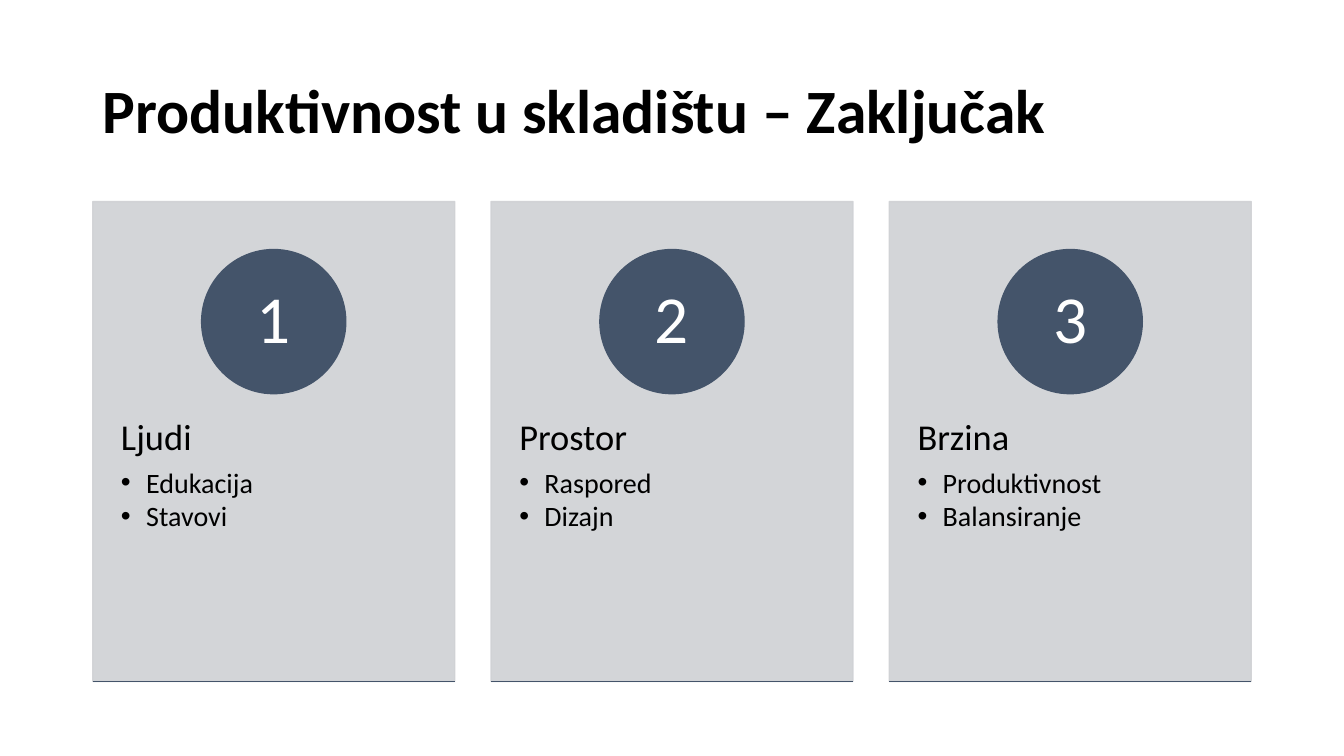
"""Builds a slide with three numbered conclusion cards on warehouse productivity."""
from lxml import etree
from pptx import Presentation, util as u
from pptx.dml.color import RGBColor
from pptx.enum import shapes, text
from pptx.oxml import ns

BLACK = RGBColor(0x00, 0x00, 0x00)
WHITE = RGBColor(0xFF, 0xFF, 0xFF)
SLATE = RGBColor(0x44, 0x54, 0x6A)
MIST = RGBColor(0xCF, 0xD1, 0xD4)

FONT = "Calibri"
MARGIN = 0.92
CARD_WIDTH = 3.59
GUTTER = 0.36
CARD_TOP = 2
CARD_HEIGHT = 4.76
CIRCLE_SIZE = 1.43
CIRCLE_TOP = CARD_TOP + CARD_HEIGHT / 10
TEXT_TOP = 3.8
TEXT_HEIGHT = 2.86

TITLE = "Produktivnost u skladištu – Zaključak"
CARDS = [
    ("Ljudi", ["Edukacija", "Stavovi"]),
    ("Prostor", ["Raspored", "Dizajn"]),
    ("Brzina", ["Produktivnost", "Balansiranje"]),
]


def add_panel(page, kind, area, color, opacity=100):
    """Draws a filled shape with a matching one-point outline."""
    panel = page.shapes.add_shape(kind, *map(u.Inches, area))
    panel.shadow.inherit = False
    panel.fill.solid()
    panel.fill.fore_color.rgb = color
    panel.line.color.rgb = color
    panel.line.width = u.Pt(1)
    if opacity < 100:
        for tone in panel._element.spPr.iter(ns.qn("a:srgbClr")):
            etree.SubElement(tone, ns.qn("a:alpha"), val=str(opacity * 1000))
    return panel


def set_frame(box, anchor, side, end):
    """Sets wrapping, anchor and insets, and returns the text frame."""
    frame = box.text_frame
    frame.word_wrap = True
    frame.vertical_anchor = anchor
    frame.margin_left = frame.margin_right = u.Inches(side)
    frame.margin_top = frame.margin_bottom = u.Inches(end)
    return frame


def add_box(page, area, anchor, side=0.1, end=0.05):
    """Adds a text box and returns its text frame."""
    return set_frame(page.shapes.add_textbox(*map(u.Inches, area)), anchor, side, end)


def write(para, words, size, color=BLACK, bold=False, after=0):
    """Adds one styled run to a paragraph."""
    para.line_spacing = 0.9
    para.space_after = u.Pt(after)
    span = para.add_run()
    span.text = words
    span.font.name = FONT
    span.font.size = u.Pt(size)
    span.font.bold = bold
    span.font.color.rgb = color


def add_bullet(para):
    """Gives a paragraph a hanging round bullet."""
    para.level = 1
    props = para._p.get_or_add_pPr()
    props.set("marL", str(u.Inches(0.25)))
    props.set("indent", str(-u.Inches(0.25)))
    etree.SubElement(props, ns.qn("a:buFont"), typeface="Arial")
    etree.SubElement(props, ns.qn("a:buChar"), char="•")


def add_rule(page, left, top, width):
    """Draws a thin horizontal line."""
    ends = map(u.Inches, (left, top, left + width, top))
    rule = page.shapes.add_connector(shapes.MSO_CONNECTOR.STRAIGHT, *ends)
    rule.line.color.rgb = SLATE
    rule.line.width = u.Pt(1)
    etree.SubElement(rule._element.spPr, ns.qn("a:effectLst"))


def add_badge(page, left, number):
    """Draws a numbered circle centred in its card."""
    area = (left + (CARD_WIDTH - CIRCLE_SIZE) / 2, CIRCLE_TOP, CIRCLE_SIZE, CIRCLE_SIZE)
    circle = add_panel(page, shapes.MSO_SHAPE.OVAL, area, SLATE)
    para = set_frame(circle, text.MSO_ANCHOR.MIDDLE, 0.11, 0.01).paragraphs[0]
    para.alignment = text.PP_ALIGN.CENTER
    write(para, str(number), 48, WHITE)


def add_card(page, column, heading, points):
    """Draws one card with its badge, heading, bullets and bottom rule."""
    left = MARGIN + column * (CARD_WIDTH + GUTTER)
    area = (left, CARD_TOP, CARD_WIDTH, CARD_HEIGHT)
    add_panel(page, shapes.MSO_SHAPE.RECTANGLE, area, MIST, opacity=90)
    area = (left, TEXT_TOP, CARD_WIDTH, TEXT_HEIGHT)
    frame = add_box(page, area, text.MSO_ANCHOR.TOP, 0.28, 0.36)
    write(frame.paragraphs[0], heading, 26, after=7.3)
    for point in points:
        para = frame.add_paragraph()
        add_bullet(para)
        write(para, point, 20, after=2.4)
    add_badge(page, left, column + 1)
    add_rule(page, left, CARD_TOP + CARD_HEIGHT, CARD_WIDTH)


def main():
    """Builds and saves the deck."""
    deck = Presentation()
    deck.slide_width, deck.slide_height = u.Inches(13.33), u.Inches(7.5)
    page = deck.slides.add_slide(deck.slide_layouts[6])
    title = add_box(page, (MARGIN, 0.4, 11.5, 1.45), text.MSO_ANCHOR.MIDDLE)
    write(title.paragraphs[0], TITLE, 44, bold=True)
    for column, (heading, points) in enumerate(CARDS):
        add_card(page, column, heading, points)
    deck.save("out.pptx")


if __name__ == "__main__":
    main()
